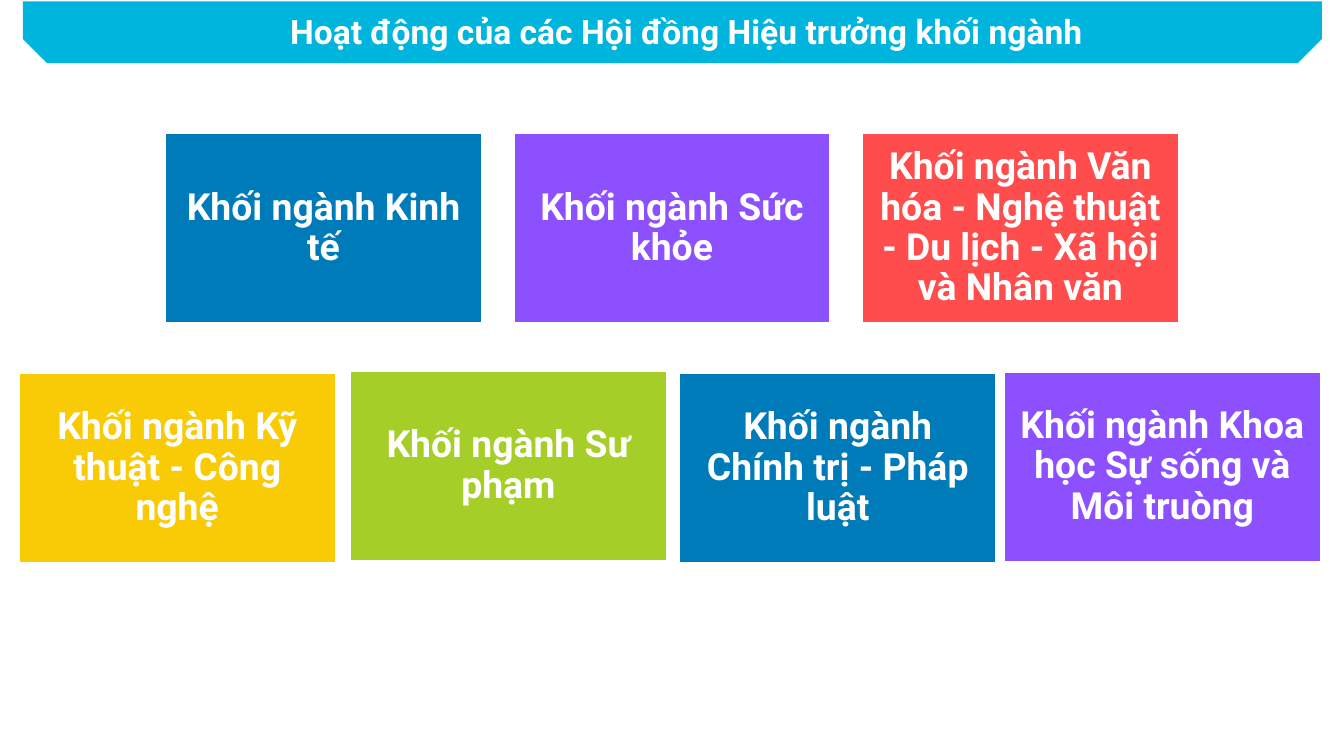
from pptx import Presentation
from pptx.dml.color import RGBColor
from pptx.enum.shapes import MSO_SHAPE
from pptx.enum.text import MSO_ANCHOR, MSO_AUTO_SIZE, PP_ALIGN
from pptx.util import Pt

COLORS = {
    "white": "FFFFFF",
    "cyan": "00B5DD",
    "blue": "007BB9",
    "purple": "8C50FF",
    "red": "FF4D4D",
    "yellow": "F9CB07",
    "green": "A6CE28",
}
BOX_WIDTH, BOX_HEIGHT = 339.3, 203.6
TOP_ROW_LEFT, TOP_ROW_TOP, TOP_ROW_PITCH = 177, 142.6, 373.3
BOX_INSET = 12

# Each box: text, colour, left, top
top_row = [
    ("Khối ngành Kinh tế", "blue"),
    ("Khối ngành Sức khỏe", "purple"),
    ("Khối ngành Văn hóa - Nghệ thuật - Du lịch - Xã hội và Nhân văn", "red"),
]
boxes = [
    (text, color, TOP_ROW_LEFT + column * TOP_ROW_PITCH, TOP_ROW_TOP)
    for column, (text, color) in enumerate(top_row)
]
boxes += [
    ("Khối ngành Kỹ thuật - Công nghệ", "yellow", 20.2, 399.6),
    ("Khối ngành Sư phạm", "green", 375.1, 397.4),
    ("Khối ngành Chính trị - Pháp luật", "blue", 727.9, 399.6),
    ("Khối ngành Khoa học Sự sống và Môi truòng", "purple", 1075.7, 398.2),
]


def add_filled_shape(slide, kind, left, top, width, height, color):
    shape = slide.shapes.add_shape(kind, Pt(left), Pt(top), Pt(width), Pt(height))
    shape.shadow.inherit = False
    shape.fill.solid()
    shape.fill.fore_color.rgb = RGBColor.from_string(COLORS[color])
    return shape


def write_text(shape, text, size, frame_format, line_spacing):
    """Put one centred, bold white paragraph in the shape."""
    frame = shape.text_frame
    frame.text = text
    for name, value in frame_format.items():
        setattr(frame, name, value)
    paragraph = frame.paragraphs[0]
    paragraph.alignment = PP_ALIGN.CENTER
    paragraph.line_spacing = line_spacing
    font = paragraph.runs[0].font
    for name, value in {"name": "Roboto", "size": Pt(size), "bold": True}.items():
        setattr(font, name, value)
    font.color.rgb = RGBColor.from_string(COLORS["white"])


presentation = Presentation()
presentation.slide_width = Pt(1440)
presentation.slide_height = Pt(810)
slide = presentation.slides.add_slide(presentation.slide_layouts[5])

# Title on a banner with cut lower corners
title = slide.shapes.title
title_place = {"left": 55.4, "top": 7.9, "width": 1360, "height": 51}
for name, value in title_place.items():
    setattr(title, name, Pt(value))
title_format = {
    "word_wrap": True,
    "auto_size": MSO_AUTO_SIZE.SHAPE_TO_FIT_TEXT,
    "vertical_anchor": MSO_ANCHOR.TOP,
}
write_text(title, "Hoạt động của các Hội đồng Hiệu trưởng khối ngành", 36, title_format, 1.0)

banner = add_filled_shape(
    slide, MSO_SHAPE.SNIP_2_SAME_RECTANGLE, 24.5, 1.4, 1391.8, 66.2, "cyan"
)
banner.adjustments[0] = 0
banner.adjustments[1] = 0.39
banner.line.fill.background()
title.element.addprevious(banner.element)

# Boxes for the groups of disciplines
box_format = {"word_wrap": True, "vertical_anchor": MSO_ANCHOR.MIDDLE}
for side in ("left", "top", "right", "bottom"):
    box_format[f"margin_{side}"] = Pt(BOX_INSET)

for text, color, left, top in boxes:
    box = add_filled_shape(
        slide, MSO_SHAPE.RECTANGLE, left, top, BOX_WIDTH, BOX_HEIGHT, color
    )
    box.line.color.rgb = RGBColor.from_string(COLORS["white"])
    box.line.width = Pt(2)
    write_text(box, text, 40, box_format, 0.9)

presentation.save("out.pptx")
